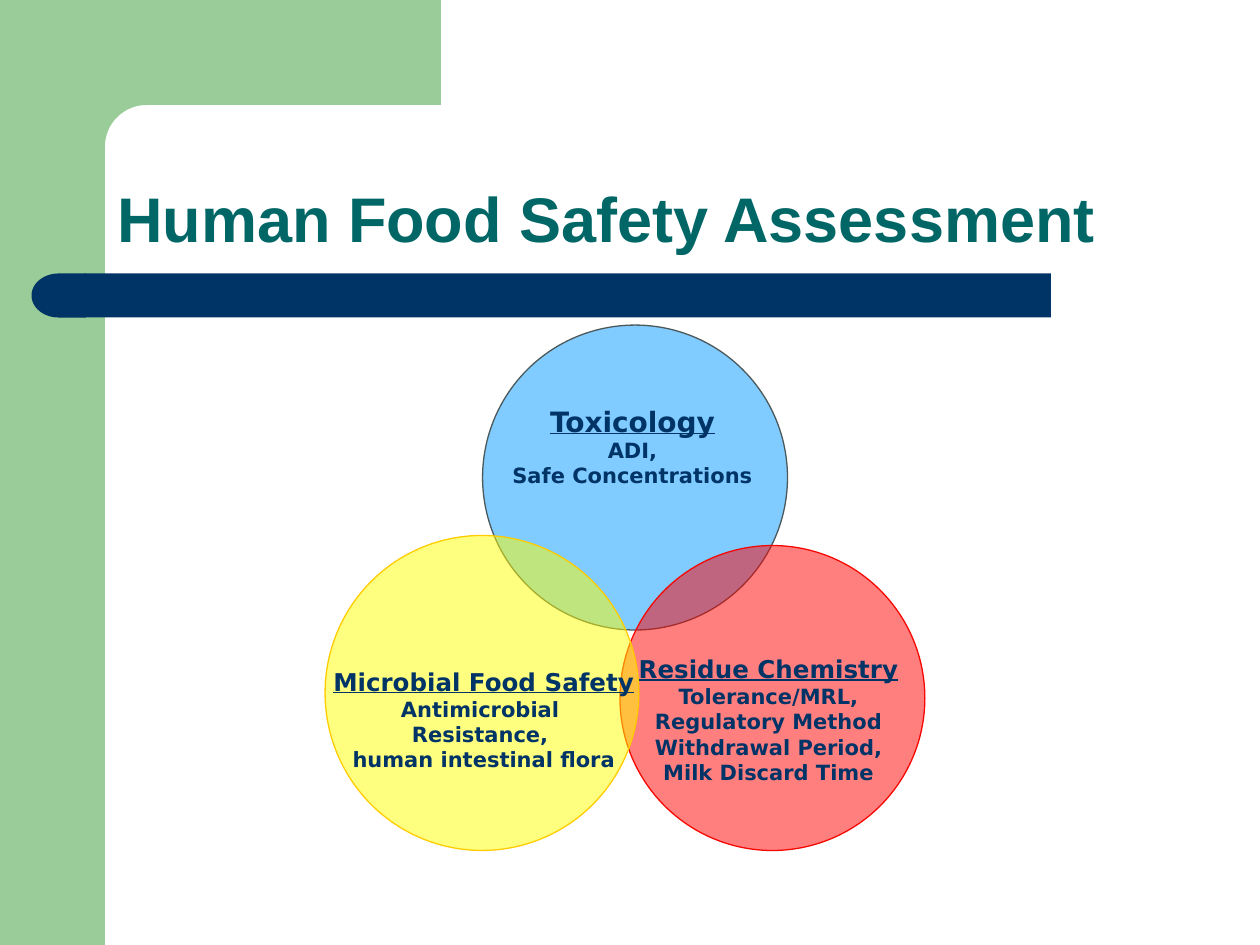
"""Build the Human Food Safety Assessment slide with three overlapping circles."""
from dataclasses import dataclass
from math import cos, pi, sin

from lxml import etree
from pptx import Presentation
from pptx.dml.color import RGBColor
from pptx.enum.shapes import MSO_SHAPE
from pptx.enum.text import MSO_ANCHOR, MSO_AUTO_SIZE, PP_ALIGN
from pptx.oxml.ns import qn
from pptx.util import Inches, Pt

RECTANGLE = MSO_SHAPE.RECTANGLE
DELAY = MSO_SHAPE.FLOWCHART_DELAY
OVAL = MSO_SHAPE.OVAL
MIDDLE, BOTTOM = MSO_ANCHOR.MIDDLE, MSO_ANCHOR.BOTTOM
LEFT, CENTER = PP_ALIGN.LEFT, PP_ALIGN.CENTER
NO_AUTOFIT = MSO_AUTO_SIZE.NONE
TITLE_ONLY = 5


@dataclass(frozen=True)
class Theme:
    """Colours, fonts and type sizes of the slide."""
    green: str = "99CC99"
    navy: str = "003366"
    teal: str = "006666"
    blue: str = "0399FF"
    slate: str = "4B595B"
    red: str = "FF0000"
    red_line: str = "F60802"
    yellow: str = "FFFF00"
    gold: str = "FFCC00"
    title_font: str = "Arial"
    label_font: str = "DejaVu Sans"
    title_size: int = 36
    large_heading: int = 16
    heading: int = 14
    detail: int = 12


def write_text(paragraph, text, *, font, size, color, align=LEFT, underline=False):
    """Fill a paragraph with one bold run."""
    paragraph.alignment = align
    run = paragraph.add_run()
    run.text = text
    run.font.name = font
    run.font.size = Pt(size)
    run.font.bold = True
    run.font.underline = underline
    run.font.color.rgb = RGBColor.from_string(color)


class SlideBuilder:
    """Draws styled elements on the current slide."""

    def __init__(self, slide, theme):
        self.slide = slide
        self.theme = theme

    def paint(self, shape, fill=None, line=None, opacity=100):
        """Set the fill, outline and opacity of a shape."""
        shape.shadow.inherit = False
        if fill:
            shape.fill.solid()
            shape.fill.fore_color.rgb = RGBColor.from_string(fill)
        else:
            shape.fill.background()
        if opacity < 100:
            color = shape.fill._xPr.find(qn("a:solidFill"))[0]
            etree.SubElement(color, qn("a:alpha"), val=str(opacity * 1000))
        if line:
            shape.line.color.rgb = RGBColor.from_string(line)
            shape.line.width = Pt(0.75)
        else:
            shape.line.fill.background()

    def shape(self, kind, box, fill=None, **style):
        """Add a preset shape."""
        shape = self.slide.shapes.add_shape(kind, *map(Inches, box))
        self.paint(shape, fill, **style)
        return shape

    def outline(self, points, fill):
        """Add a closed freeform."""
        start, *rest = [(Inches(x), Inches(y)) for x, y in points]
        builder = self.slide.shapes.build_freeform(*start)
        builder.add_line_segments(rest, close=True)
        self.paint(builder.convert_to_shape(), fill)

    def title(self, text, box):
        """Place the title placeholder in front as a rounded rectangle."""
        title = self.slide.shapes.title
        title.left, title.top, title.width, title.height = map(Inches, box)
        element = title._element
        geometry = etree.SubElement(element.spPr, qn("a:prstGeom"), prst="roundRect")
        adjustments = etree.SubElement(geometry, qn("a:avLst"))
        etree.SubElement(adjustments, qn("a:gd"), name="adj", fmla="val 21700")
        element.getparent().append(element)
        frame = title.text_frame
        frame.auto_size = NO_AUTOFIT
        frame.vertical_anchor = BOTTOM
        paragraph = frame.paragraphs[0]
        paragraph.line_spacing = 0.9
        write_text(paragraph, text, font=self.theme.title_font,
                   size=self.theme.title_size, color=self.theme.teal)

    def label(self, box, heading, details, heading_size):
        """Add an underlined heading with detail lines below it."""
        frame = self.shape(RECTANGLE, box).text_frame
        frame.margin_left = frame.margin_right = 0
        frame.margin_top = frame.margin_bottom = 0
        frame.word_wrap = False
        frame.vertical_anchor = MIDDLE
        style = dict(font=self.theme.label_font, color=self.theme.navy, align=CENTER)
        write_text(frame.paragraphs[0], heading, size=heading_size, underline=True, **style)
        for detail in details:
            write_text(frame.add_paragraph(), detail, size=self.theme.detail, **style)


def draw_frame(builder):
    """Draw the green corner and the navy bar."""
    theme = builder.theme
    edge, radius, steps = 5 / 6, 0.33, 16
    center = edge + radius
    angles = [pi / 2 * step / steps for step in range(steps + 1)]
    corner = [(center - radius * sin(angle), center - radius * cos(angle))
              for angle in angles]
    builder.shape(RECTANGLE, (0, 0, edge, 7.5), theme.green)
    builder.outline([(0.5, 0), (3.5, 0), (3.5, edge), *corner,
                     (edge, 1.28), (0.5, 1.28)], theme.green)
    builder.shape(RECTANGLE, (0.67, 2.17, 7.67, 0.35), theme.navy)
    builder.shape(DELAY, (0.25, 2.17, 0.43, 0.35), theme.navy).rotation = 180


def main():
    """Build and save the slide."""
    presentation = Presentation()
    presentation.slide_width, presentation.slide_height = Inches(10), Inches(7.5)
    slide = presentation.slides.add_slide(presentation.slide_layouts[TITLE_ONLY])
    theme = Theme()
    builder = SlideBuilder(slide, theme)
    draw_frame(builder)
    circles = [
        ((3.83, 2.58, 2.42, 2.42), theme.blue, theme.slate, (4.12, 3.33, 1.8, 0.42),
         "Toxicology", ["ADI,", "Safe Concentrations"], theme.large_heading),
        ((4.92, 4.33, 2.42, 2.42), theme.red, theme.red_line, (5.2, 5.5, 1.8, 0.42),
         "Residue Chemistry",
         ["Tolerance/MRL,", "Regulatory Method", "Withdrawal Period,", "Milk Discard Time"],
         theme.heading),
        ((2.58, 4.25, 2.49, 2.5), theme.yellow, theme.gold, (2.94, 5.5, 1.8, 0.42),
         "Microbial Food Safety",
         ["Antimicrobial ", "Resistance, ", "human intestinal flora"], theme.heading),
    ]
    for circle, fill, line, label, heading, details, size in circles:
        builder.shape(OVAL, circle, fill, line=line, opacity=50)
        builder.label(label, heading, details, size)
    builder.title("Human Food Safety Assessment", (0.83, 0.83, 8.67, 1.25))
    presentation.save("out.pptx")


if __name__ == "__main__":
    main()
